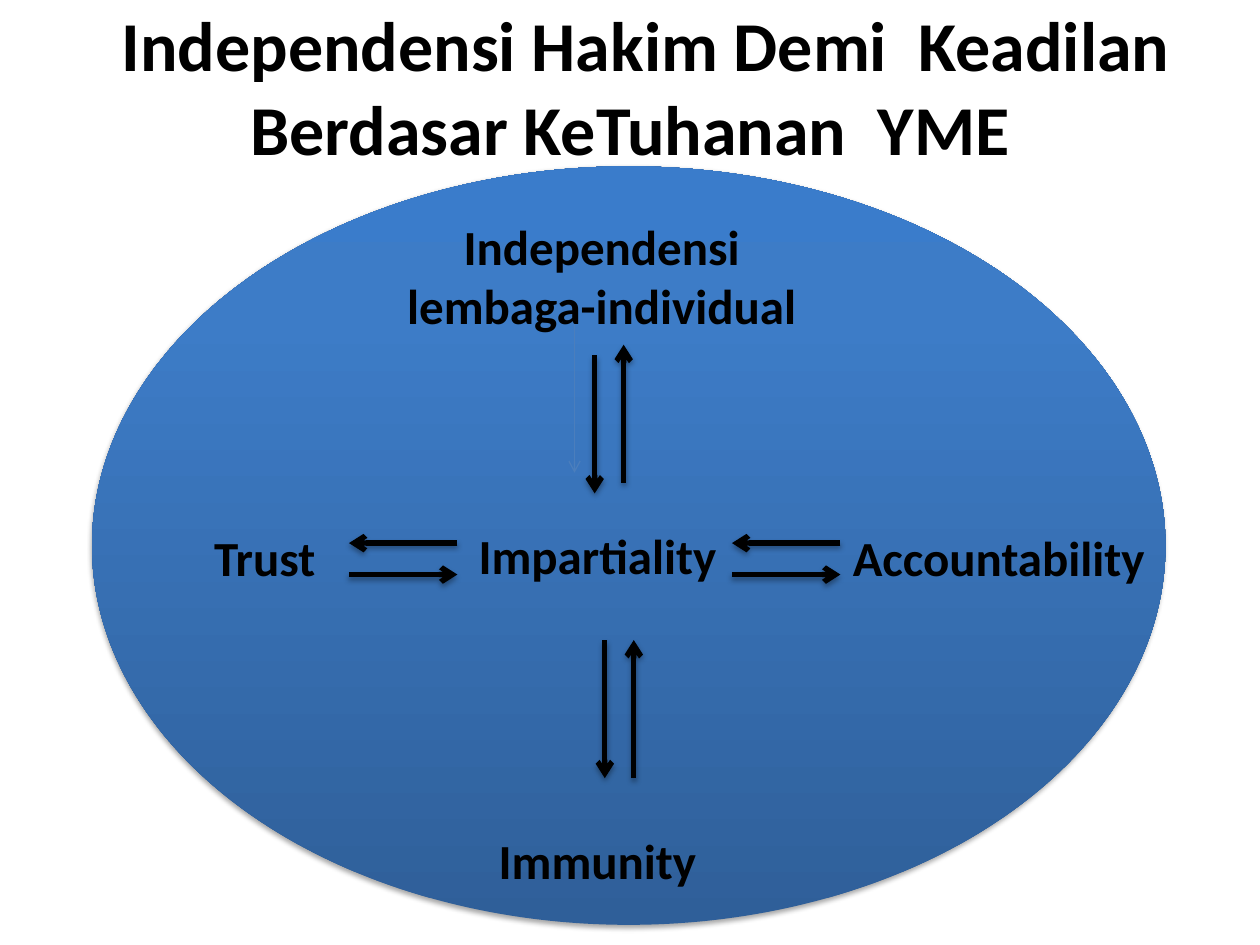
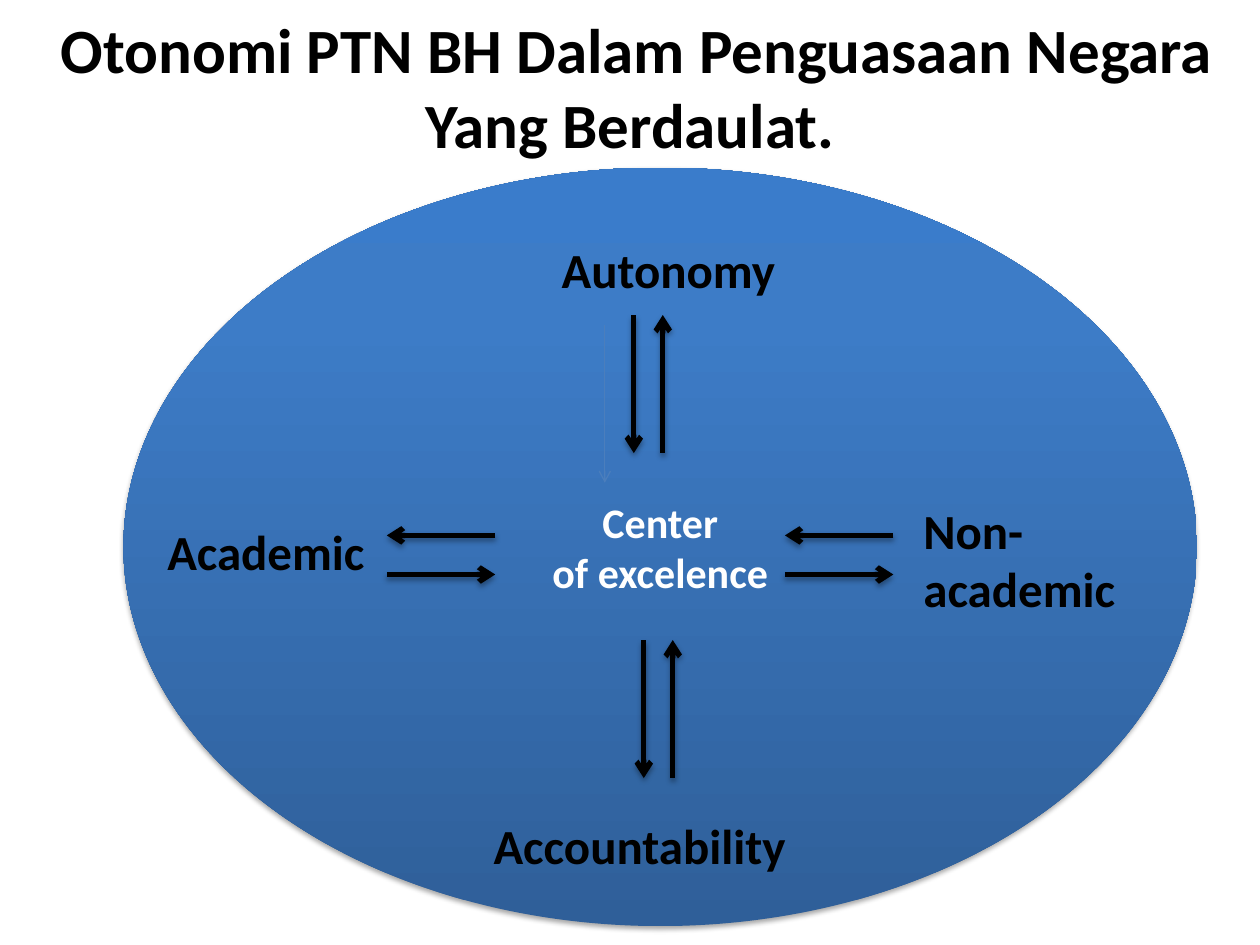
from copy import deepcopy
from dataclasses import dataclass

from lxml import etree
from pptx import Presentation
from pptx.dml.color import RGBColor
from pptx.enum.shapes import MSO_CONNECTOR, MSO_SHAPE
from pptx.enum.text import MSO_ANCHOR, MSO_AUTO_SIZE, PP_ALIGN
from pptx.oxml.ns import qn
from pptx.util import Inches, Pt

STRAIGHT = MSO_CONNECTOR.STRAIGHT
OVAL = MSO_SHAPE.OVAL
MIDDLE = MSO_ANCHOR.MIDDLE
FIXED_SIZE = MSO_AUTO_SIZE.NONE
GROW = MSO_AUTO_SIZE.SHAPE_TO_FIT_TEXT
CENTER, LEFT = PP_ALIGN.CENTER, PP_ALIGN.LEFT

COLUMNS = ROWS = 100
TITLE_ONLY_LAYOUT = 5


@dataclass(frozen=True)
class Theme:
    font: str = "Calibri"
    ink: str = "000000"
    paper: str = "FFFFFF"
    faint: str = "4B7EBC"
    gradient: tuple = ((0, "2F5F99"), (0.8, "3D7CC7"), (1, "3A7CCB"))
    label_size: int = 28
    center_size: int = 24
    arrow_width: float = 3
    faint_width: float = 0.75


THEME = Theme()


@dataclass(frozen=True)
class Box:
    left: float
    top: float
    width: float
    height: float

    def x(self, column):
        return round(self.left + self.width * column / COLUMNS)

    def y(self, row):
        return round(self.top + self.height * row / ROWS)

    def cell(self, column, row, columns, rows):
        left, top = self.x(column), self.y(row)
        return Box(left, top, self.x(column + columns) - left, self.y(row + rows) - top)

    def bounds(self):
        return self.left, self.top, self.width, self.height


def format_paragraph(paragraph, size, color, alignment):
    paragraph.alignment = alignment
    font = paragraph.font
    font.name, font.size, font.bold = THEME.font, Pt(size), True
    font.color.rgb = RGBColor.from_string(color)


def set_effects(shape, shadow):
    effects = etree.SubElement(shape._element.spPr, qn("a:effectLst"))
    if shadow:
        outer = etree.SubElement(effects, qn("a:outerShdw"), blurRad=str(Pt(3.1)),
                                 dist=str(Pt(1.8)), dir="5400000", rotWithShape="0")
        color = etree.SubElement(outer, qn("a:srgbClr"), val=THEME.ink)
        etree.SubElement(color, qn("a:alpha"), val="35000")


def add_arrow(shapes, start, end, color=THEME.ink, width=THEME.arrow_width, shadow=True):
    arrow = shapes.add_connector(STRAIGHT, *start, *end)
    arrow.line.color.rgb = RGBColor.from_string(color)
    arrow.line.width = Pt(width)
    line_element = arrow._element.spPr.find(qn("a:ln"))
    etree.SubElement(line_element, qn("a:tailEnd"), type="arrow")
    set_effects(arrow, shadow)


def add_vertical_pair(shapes, box, column, row, lift=0):
    pair = box.cell(column, row, 2.7, 18.2)
    rise = box.y(lift) - box.top
    left, right = pair.x(0), pair.x(COLUMNS)
    top, bottom = pair.y(0), pair.y(ROWS)
    add_arrow(shapes, (left, top), (left, bottom))
    add_arrow(shapes, (right, bottom - rise), (right, top - rise))


def add_horizontal_pair(shapes, box, column, row, gap):
    pair = box.cell(column, row, 10.1, gap)
    left, right = pair.x(0), pair.x(COLUMNS)
    top, bottom = pair.y(0), pair.y(ROWS)
    add_arrow(shapes, (right, top), (left, top))
    add_arrow(shapes, (left, bottom), (right, bottom))


def add_label(shapes, box, text, column, row, columns, lines=1, alignment=LEFT):
    rows = 9.47 if lines == 1 else 17.28
    label = shapes.add_textbox(*box.cell(column, row, columns, rows).bounds())
    frame = label.text_frame
    frame.word_wrap, frame.auto_size = True, GROW
    frame.text = text
    format_paragraph(frame.paragraphs[0], THEME.label_size, THEME.ink, alignment)


def add_ellipse(slide, box, center_text):
    ellipse = slide.shapes.add_shape(OVAL, *box.bounds())
    ellipse.fill.gradient()
    ellipse.fill.gradient_angle = 90
    stop_list = ellipse._element.spPr.find(".//" + qn("a:gsLst"))
    stop_list.append(deepcopy(stop_list[-1]))
    for stop, (position, color) in zip(ellipse.fill.gradient_stops, THEME.gradient):
        stop.position = position
        stop.color.rgb = RGBColor.from_string(color)
    ellipse.line.fill.background()
    set_effects(ellipse, True)
    if center_text:
        frame = ellipse.text_frame
        frame.word_wrap, frame.vertical_anchor = False, MIDDLE
        frame.text = center_text
        for paragraph in frame.paragraphs:
            format_paragraph(paragraph, THEME.center_size, THEME.paper, CENTER)


def add_title(slide, box, text, size, indent):
    title = slide.shapes.title
    title.left, title.top, title.width, title.height = box.bounds()
    frame = title.text_frame
    frame.text = text
    frame.word_wrap, frame.auto_size, frame.vertical_anchor = True, FIXED_SIZE, MIDDLE
    paragraph = frame.paragraphs[0]
    format_paragraph(paragraph, size, THEME.ink, CENTER)
    paragraph._p.get_or_add_pPr().set("indent", str(Inches(indent)))


def add_diagram(slide, box, diagram):
    add_ellipse(slide, box, diagram.get("center"))
    column, row = diagram["faint_arrow"]
    faint = box.cell(column, row, 0, 20.8)
    add_arrow(slide.shapes, (faint.left, faint.top), (faint.left, faint.y(ROWS)),
              THEME.faint, THEME.faint_width, False)
    shapes = slide.shapes.add_group_shape().shapes
    for pair in diagram["vertical_pairs"]:
        add_vertical_pair(shapes, box, *pair)
    for column in diagram["side_columns"]:
        add_horizontal_pair(shapes, box, column, *diagram["side_row_gap"])
    for label in diagram["labels"]:
        add_label(shapes, box, *label)


def add_diagram_slide(presentation, diagram):
    slide = presentation.slides.add_slide(presentation.slide_layouts[TITLE_ONLY_LAYOUT])
    page = Box(0, 0, presentation.slide_width, presentation.slide_height)
    add_title(slide, page.cell(2.3, 1.87, 95.4, 14.4), *diagram["title"])
    add_diagram(slide, page.cell(*diagram["origin"], 85.2, 80.27), diagram)


JUDGE_INDEPENDENCE = {
    "title": ("Independensi Hakim Demi  Keadilan Berdasar KeTuhanan  YME", 40, 0.25),
    "origin": (7.3, 17.6),
    "faint_arrow": (44.95, 19.6),
    "vertical_pairs": [(46.83, 24.92, 1.4), (47.77, 62.46)],
    "side_columns": (59.62, 23.94),
    "side_row_gap": (49.67, 4.15),
    "labels": [
        ("Impartiality", 34.86, 46.51, 26.64),
        ("Immunity", 36.74, 86.71, 22.89),
        ("Independensi lembaga-individual", 26.64, 5.81, 41.67, 2, CENTER),
        ("Trust", 10.21, 46.84, 14.67),
        ("Accountability", 69.72, 46.84, 34.15),
    ],
}

UNIVERSITY_AUTONOMY = {
    "title": ("Otonomi PTN BH Dalam Penguasaan Negara Yang Berdaulat.", 36, 0.11),
    "origin": (9.8, 17.73),
    "center": "Center\nof excelence",
    "faint_arrow": (44.84, 20.76),
    "vertical_pairs": [(47.54, 19.44), (48.47, 62.29)],
    "side_columns": (61.62, 24.53),
    "side_row_gap": (48.5, 5.15),
    "labels": [
        ("Accountability", 33.33, 84.55, 32.04),
        ("Autonomy", 39.67, 8.64, 27),
        ("Academic", 2.93, 45.85, 21.48),
        ("Non-academic", 73.36, 43.02, 21.13, 2),
    ],
}


def main():
    presentation = Presentation()
    presentation.slide_width, presentation.slide_height = Inches(10), Inches(7.5)
    for diagram in (JUDGE_INDEPENDENCE, UNIVERSITY_AUTONOMY):
        add_diagram_slide(presentation, diagram)
    presentation.save("out.pptx")


if __name__ == "__main__":
    main()
